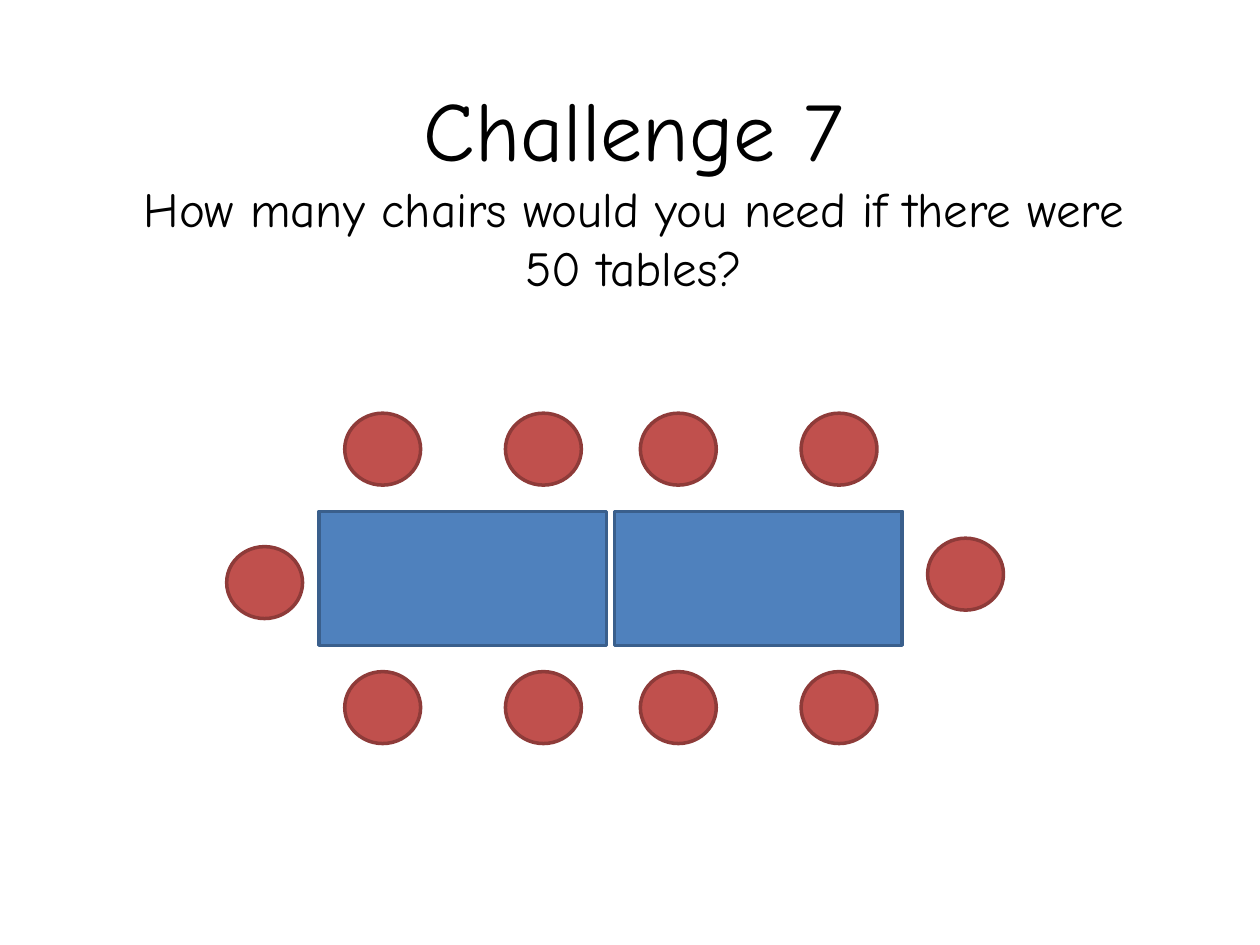
from pptx import Presentation
from pptx.dml.color import RGBColor
from pptx.enum import shapes, text
from pptx.util import Cm, Pt

FONT = "Comic Neue"
BLACK = RGBColor(0x00, 0x00, 0x00)
TABLE_FILL, TABLE_LINE = RGBColor(0x4F, 0x81, 0xBD), RGBColor(0x3A, 0x5F, 0x8C)
CHAIR_FILL, CHAIR_LINE = RGBColor(0xC0, 0x50, 0x4D), RGBColor(0x8E, 0x3B, 0x39)

HEADING = [
    ("Challenge 7", 48),
    ("How many chairs would you need if there were 50 tables?", 28),
]

# Lengths in centimetres
TABLE_SIZE = (5.8, 2.7)
TABLE_LEFTS = (6.43, 12.39)
TABLE_TOP = 10.31
CHAIR_SIZE = (1.53, 1.45)
CHAIR_OFFSETS = (0.52, 3.76)  # from the left edge of a table
CHAIR_ROWS = (8.33, 13.54)  # above and below the tables
END_CHAIRS = [(4.57, 11.02), (18.7, 10.85)]


def add_item(slide, kind, position, size, fill, line):
    sp = slide.shapes.add_shape(kind, *map(Cm, position + size))
    sp.shadow.inherit = False
    sp.fill.solid()
    sp.fill.fore_color.rgb = fill
    sp.line.color.rgb = line
    sp.line.width = Pt(2)


def add_heading(slide):
    tf = slide.shapes.add_textbox(Cm(1.98), Cm(1.19), Cm(21.59), Cm(5.16)).text_frame
    tf.word_wrap = True
    tf.vertical_anchor = text.MSO_ANCHOR.MIDDLE
    for i, (words, size) in enumerate(HEADING):
        p = tf.add_paragraph() if i else tf.paragraphs[0]
        p.text = words
        p.alignment = text.PP_ALIGN.CENTER
        font = p.runs[0].font
        font.name, font.size = FONT, Pt(size)
        font.color.rgb = BLACK


def main():
    prs = Presentation()
    prs.slide_width, prs.slide_height = Cm(25.4), Cm(19.05)
    s = prs.slides.add_slide(prs.slide_layouts[6])
    add_heading(s)

    for left in TABLE_LEFTS:
        add_item(s, shapes.MSO_SHAPE.RECTANGLE, (left, TABLE_TOP), TABLE_SIZE,
                 TABLE_FILL, TABLE_LINE)

    side_chairs = [(left + offset, top) for top in CHAIR_ROWS
                   for left in TABLE_LEFTS for offset in CHAIR_OFFSETS]
    for position in side_chairs + END_CHAIRS:
        add_item(s, shapes.MSO_SHAPE.OVAL, position, CHAIR_SIZE,
                 CHAIR_FILL, CHAIR_LINE)

    prs.save("out.pptx")


if __name__ == "__main__":
    main()
